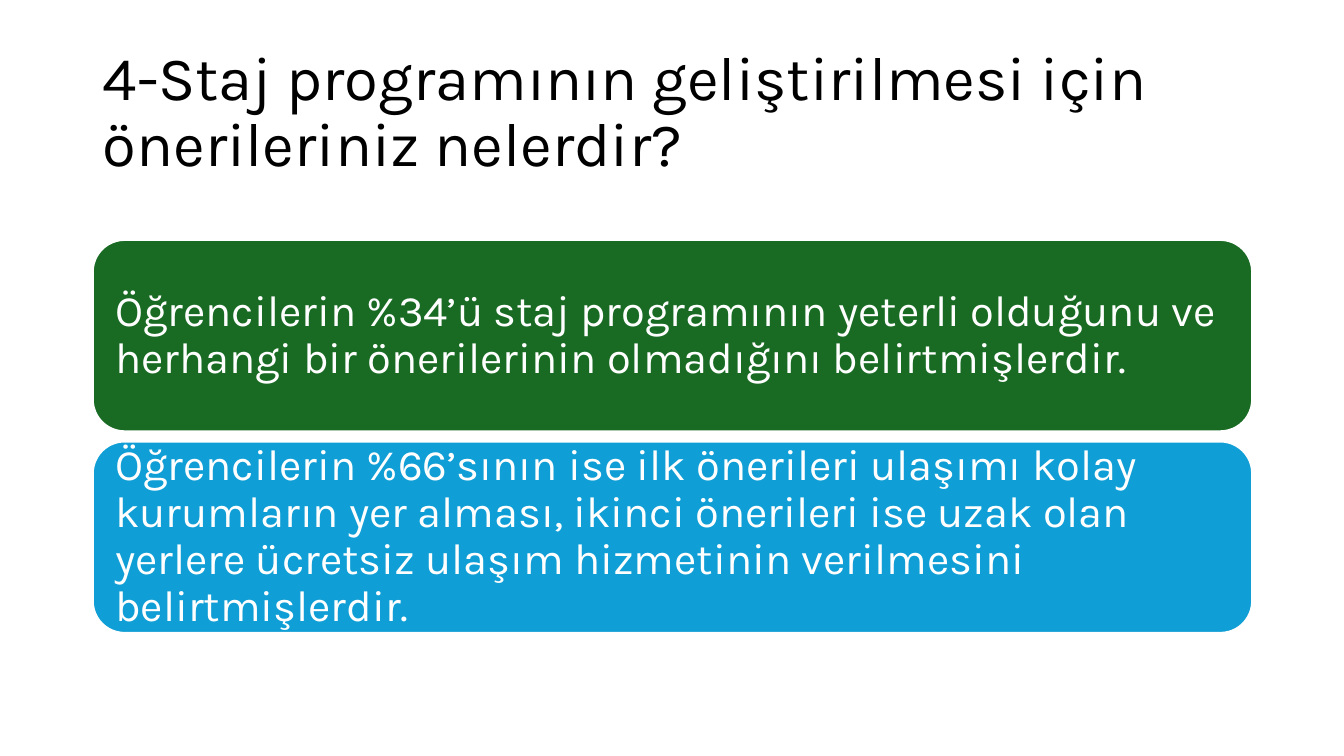
"""Build a slide with a question title and two rounded answer cards."""
from pptx import Presentation, util as u
from pptx.dml.color import RGBColor
from pptx.enum import shapes, text

BLACK = RGBColor(0x00, 0x00, 0x00)
WHITE = RGBColor(0xFF, 0xFF, 0xFF)
GREEN = RGBColor(0x19, 0x6B, 0x24)
BLUE = RGBColor(0x0F, 0x9E, 0xD5)

LEFT, WIDTH = u.Inches(0.92), u.Inches(11.5)
TOP, HIGH, STEP = u.Inches(2.38), u.Inches(1.9), u.Inches(2)
PAD = u.Inches(0.13)

CARDS = [
    (GREEN, "Öğrencilerin %34’ü staj programının yeterli olduğunu ve herhangi "
            "bir önerilerinin olmadığını belirtmişlerdir."),
    (BLUE, "Öğrencilerin %66’sının ise ilk önerileri ulaşımı kolay kurumların "
           "yer alması, ikinci önerileri ise uzak olan yerlere ücretsiz ulaşım "
           "hizmetinin verilmesini belirtmişlerdir."),
]


def put(obj, values):
    """Set each named value on an object."""
    for name, value in values.items():
        setattr(obj, name, value)


def write(shape, words, size, color, frame):
    """Fill a shape with one left-aligned paragraph."""
    body = shape.text_frame
    put(body, {"word_wrap": True, "vertical_anchor": text.MSO_ANCHOR.MIDDLE, **frame})
    para = body.paragraphs[0]
    put(para, {"alignment": text.PP_ALIGN.LEFT, "line_spacing": 0.9})
    run = para.add_run()
    run.text = words
    put(run.font, {"name": "Karla", "size": u.Pt(size)})
    run.font.color.rgb = color


deck = Presentation()
put(deck, {"slide_width": u.Inches(13.33), "slide_height": u.Inches(7.5)})
slide = deck.slides.add_slide(deck.slide_layouts[6])

title = slide.shapes.add_textbox(LEFT, u.Inches(0.4), WIDTH, u.Inches(1.45))
write(title, "4-Staj programının geliştirilmesi için önerileriniz nelerdir?",
      44, BLACK, {})

sides = ("left", "top", "right", "bottom")
pads = {f"margin_{side}": PAD for side in sides}
for row, (color, words) in enumerate(CARDS):
    card = slide.shapes.add_shape(shapes.MSO_SHAPE.ROUNDED_RECTANGLE,
                                  LEFT, TOP + row * STEP, WIDTH, HIGH)
    card.shadow.inherit = False
    card.fill.solid()
    card.fill.fore_color.rgb = color
    card.line.color.rgb = WHITE
    card.line.width = u.Pt(1.5)
    write(card, words, 31, WHITE, pads)

deck.save("out.pptx")
